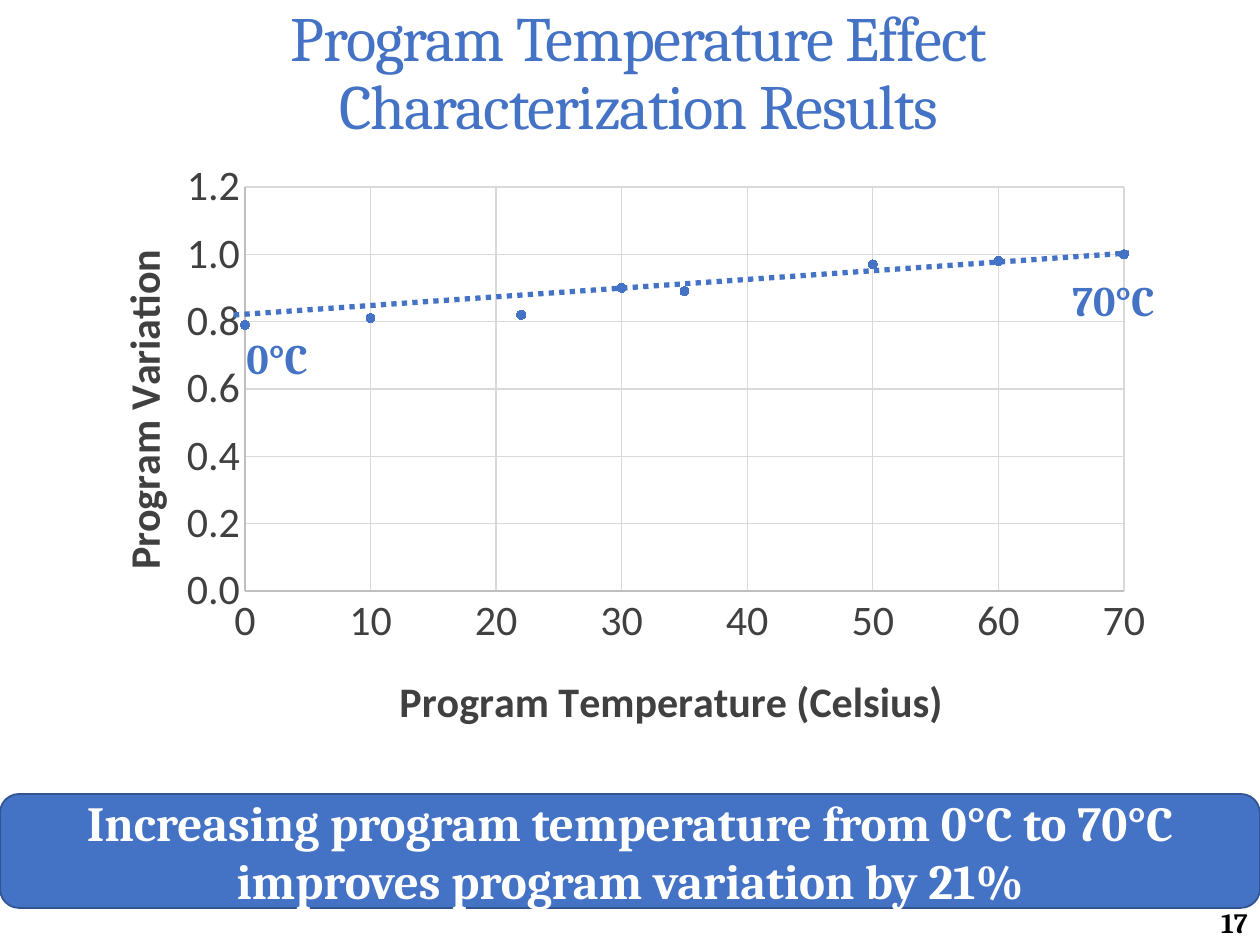
from copy import deepcopy

from pptx import Presentation
from pptx.chart.data import XyChartData
from pptx.dml.color import RGBColor
from pptx.enum.chart import XL_CHART_TYPE, XL_MARKER_STYLE, XL_TICK_MARK
from pptx.enum.dml import MSO_LINE
from pptx.enum.shapes import MSO_CONNECTOR, MSO_SHAPE
from pptx.enum.text import MSO_ANCHOR, PP_ALIGN
from pptx.oxml import parse_xml
from pptx.oxml.ns import nsdecls, qn
from pptx.util import Emu, Pt

SCALE = 914400 // 126
BLUE = RGBColor(0x44, 0x72, 0xC4)
DARK_BLUE = RGBColor(0x32, 0x54, 0x91)
WHITE = RGBColor(0xFF, 0xFF, 0xFF)
BLACK = RGBColor(0, 0, 0)
DARK_GRAY = RGBColor(0x40, 0x40, 0x40)
AXIS_GRAY = RGBColor(0xBF, 0xBF, 0xBF)
GRID_GRAY = RGBColor(0xD9, 0xD9, 0xD9)

LEFT, CENTER, RIGHT = PP_ALIGN.LEFT, PP_ALIGN.CENTER, PP_ALIGN.RIGHT
TOP, MIDDLE, BOTTOM = MSO_ANCHOR.TOP, MSO_ANCHOR.MIDDLE, MSO_ANCHOR.BOTTOM
SCATTER = XL_CHART_TYPE.XY_SCATTER
CIRCLE = XL_MARKER_STYLE.CIRCLE
NO_TICK = XL_TICK_MARK.NONE
DOTTED = MSO_LINE.ROUND_DOT
STRAIGHT = MSO_CONNECTOR.STRAIGHT
ROUNDED = MSO_SHAPE.ROUNDED_RECTANGLE

MEASUREMENTS = [(0, 0.79), (10, 0.81), (22, 0.82), (30, 0.9),
                (35, 0.89), (50, 0.97), (60, 0.98), (70, 1)]


def px(value):
    return Emu(value * SCALE)


def to_emu(box):
    return [px(value) for value in box]


def format_font(font, size, color, name="Cambria", bold=False):
    font.size = Pt(size)
    font.name = name
    font.bold = bold
    font.color.rgb = color


def write_text(shape, text, size=24, color=BLUE, bold=True, align=LEFT,
               anchor=TOP, wrap=True, spacing=None):
    frame = shape.text_frame
    frame.word_wrap = wrap
    frame.vertical_anchor = anchor
    paragraph = frame.paragraphs[0]
    paragraph.text = text
    paragraph.alignment = align
    for run in paragraph.runs:
        format_font(run.font, size, color, bold=bold)
        if spacing is not None:
            run._r.get_or_add_rPr().set("spc", str(spacing))
    for line_break in paragraph._p.findall(qn("a:br")):
        line_break.insert(0, deepcopy(paragraph.runs[0]._r.rPr))
    return paragraph


def add_label(slide, box, text, **text_format):
    write_text(slide.shapes.add_textbox(*to_emu(box)), text, **text_format)


def place_title(slide, box, text):
    title = slide.shapes.title
    title.left, title.top, title.width, title.height = to_emu(box)
    paragraph = write_text(title, text, size=36, bold=False, align=CENTER,
                           anchor=MIDDLE, spacing=-70)
    paragraph.line_spacing = 0.9
    paragraph.space_before = Pt(0)
    properties = paragraph._p.get_or_add_pPr()
    properties.set("marL", str(px(18)))
    properties.set("indent", "0")


def make_layout(chart_box, inner_box, target=None):
    left, top, width, height = chart_box
    x, y, *size = inner_box
    values = {"x": (x - left) / width, "y": (y - top) / height}
    if size:
        values.update(w=size[0] / width, h=size[1] / height)
    target_xml = f'<c:layoutTarget val="{target}"/>' if target else ""
    modes = '<c:xMode val="edge"/><c:yMode val="edge"/>'
    parts = "".join(f'<c:{key} val="{value:.4f}"/>'
                    for key, value in values.items())
    return parse_xml(f'<c:layout {nsdecls("c")}><c:manualLayout>{target_xml}'
                     f'{modes}{parts}</c:manualLayout></c:layout>')


def format_axis(axis, title, maximum, step, number_format, title_layout):
    axis.minimum_scale = 0
    axis.maximum_scale = maximum
    axis.major_unit = step
    axis.major_tick_mark = axis.minor_tick_mark = NO_TICK
    axis.has_major_gridlines = True
    for line, color in ((axis.format.line, AXIS_GRAY),
                        (axis.major_gridlines.format.line, GRID_GRAY)):
        line.color.rgb = color
        line.width = Pt(0.75)
    axis.tick_labels.number_format = number_format
    axis.tick_labels.number_format_is_linked = False
    format_font(axis.tick_labels.font, 24, DARK_GRAY, "Calibri")
    paragraph = axis.axis_title.text_frame.paragraphs[0]
    run = paragraph.add_run()
    run.text = title
    format_font(run.font, 24, DARK_GRAY, "Calibri", True)
    title_element = axis.axis_title._element
    for layout in title_element.findall(qn("c:layout")):
        title_element.remove(layout)
    title_element.find(qn("c:tx")).addnext(title_layout)


def add_variation_chart(slide, box):
    left, top, width, height = box
    data = XyChartData()
    series_data = data.add_series("Series 1")
    for temperature, variation in MEASUREMENTS:
        series_data.add_data_point(temperature, variation)
    chart = slide.shapes.add_chart(SCATTER, *to_emu(box), data).chart
    format_font(chart.font, 24, DARK_GRAY, "Calibri")
    chart.has_legend = False
    chart.has_title = False
    plot = chart.plots[0]
    plot.vary_by_categories = False
    series = plot.series[0]
    series.smooth = False
    series.format.line.fill.background()
    series.marker.style = CIRCLE
    series.marker.size = 5
    series.marker.format.fill.solid()
    series.marker.format.fill.fore_color.rgb = BLUE
    series.marker.format.line.color.rgb = BLUE
    format_axis(chart.category_axis, "Program Temperature (Celsius)", 70, 10,
                "General", make_layout(box, (left + 326, top + 516)))
    format_axis(chart.value_axis, "Program Variation", 1.2, 0.2,
                "#,##0.0", make_layout(box, (left + 42, top + 92)))
    plot_area = chart._chartSpace.chart.plotArea
    for layout in plot_area.findall(qn("c:layout")):
        plot_area.remove(layout)
    plot_box = (left + 179, top + 37, 879, 404)
    plot_area.insert(0, make_layout(box, plot_box, "inner"))


def add_trend(slide, box):
    left, top, width, height = box
    trend = slide.shapes.add_connector(
        STRAIGHT, *to_emu((left, top + height, left + width, top)))
    trend.line.color.rgb = BLUE
    trend.line.width = Pt(3)
    trend.line.dash_style = DOTTED
    trend._element.spPr.append(parse_xml(f'<a:effectLst {nsdecls("a")}/>'))


def add_banner(slide, box, text):
    banner = slide.shapes.add_shape(ROUNDED, *to_emu(box))
    banner.shadow.inherit = False
    banner.fill.solid()
    banner.fill.fore_color.rgb = BLUE
    banner.line.color.rgb = DARK_BLUE
    banner.line.width = Pt(1)
    write_text(banner, text, size=28, color=WHITE, align=CENTER, anchor=MIDDLE)


def main():
    presentation = Presentation()
    presentation.slide_width, presentation.slide_height = px(1260), px(945)
    slide = presentation.slides.add_slide(presentation.slide_layouts[5])
    place_title(slide, (0, 0, 1260, 150),
                "Program Temperature Effect\nCharacterization Results")
    add_label(slide, (1129, 898, 131, 47), "17", size=16, color=BLACK,
              align=RIGHT, anchor=BOTTOM)
    add_variation_chart(slide, (66, 150, 1101, 595))
    add_trend(slide, (234, 253, 895, 62))
    add_banner(slide, (0, 794, 1260, 114),
               "Increasing program temperature from 0°C to 70°C\n"
               "improves program variation by 21%")
    add_label(slide, (1060, 268, 116, 63), "70°C", wrap=False)
    add_label(slide, (234, 326, 110, 63), "0°C")
    presentation.save("out.pptx")


if __name__ == "__main__":
    main()
